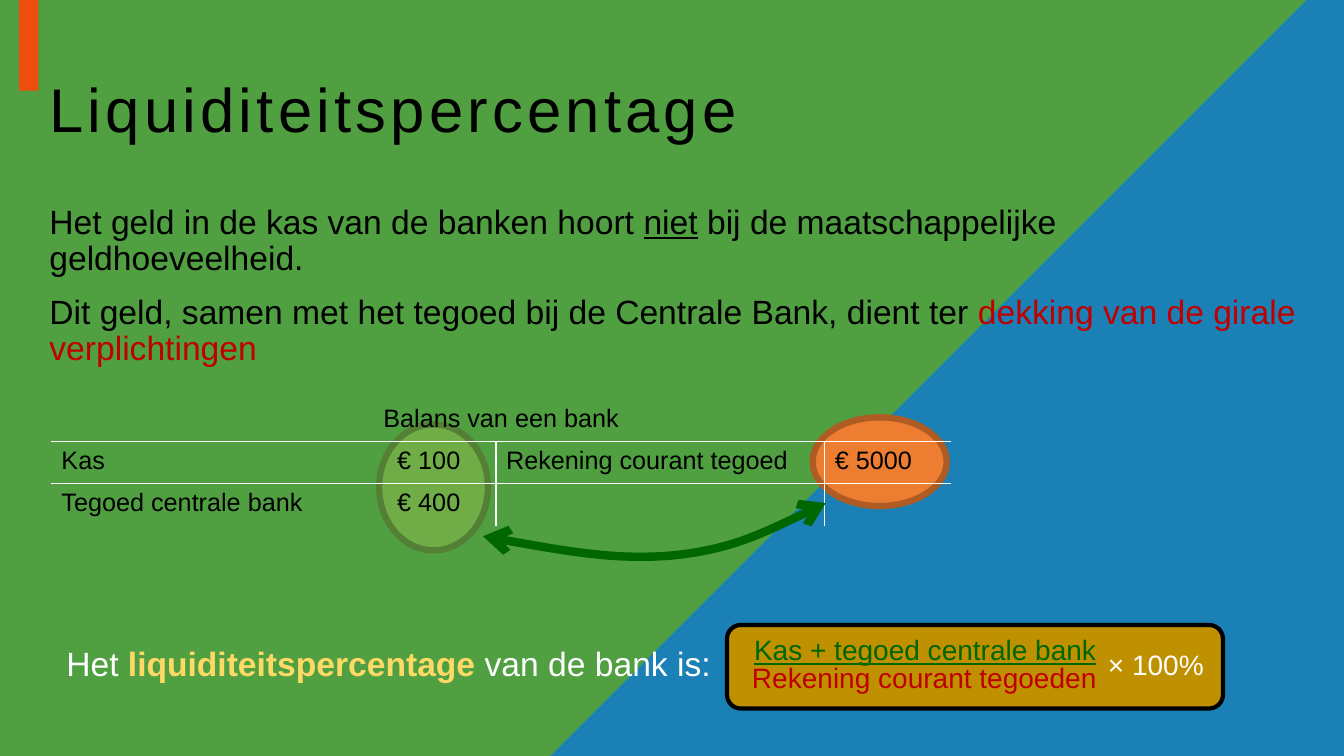
from lxml.etree import SubElement
from pptx import Presentation
from pptx.dml.color import RGBColor
from pptx.enum.shapes import MSO_SHAPE
from pptx.enum.text import MSO_ANCHOR, MSO_AUTO_SIZE, PP_ALIGN
from pptx.oxml.ns import qn
from pptx.util import Pt

PX = 9144
FONT = "Arial"
COLORS = {
    "field": "258812", "wedge": "1A80B6", "tab": "ED4D0F",
    "black": "000000", "white": "FFFFFF", "red": "C00000", "green": "006600",
    "yellow": "FFD966", "gold": "BF9000",
    "orange": "ED7D31", "orange_edge": "AF5C24",
    "lime": "70AD47", "lime_edge": "538035",
}


def px(*lengths):
    return [length * PX for length in lengths]


def color(name):
    return RGBColor.from_string(COLORS[name])


def add_block(slide, preset, box, fill, edge=None, edge_width=0):
    block = slide.shapes.add_shape(preset, *px(*box))
    style_block(block, fill, edge, edge_width)
    return block


def style_block(block, fill, edge=None, edge_width=0):
    block.shadow.inherit = False
    block.fill.solid()
    block.fill.fore_color.rgb = color(fill)
    if edge:
        block.line.color.rgb = color(edge)
        block.line.width = Pt(edge_width)
    else:
        block.line.fill.background()


def write(paragraph, runs, size, ink):
    paragraph.font.name = FONT
    paragraph.font.size = Pt(size)
    shared_ink = all(not changes.get("ink") for _, changes in runs)
    if shared_ink:
        paragraph.font.color.rgb = color(ink)
    for wording, changes in runs:
        run = paragraph.add_run()
        run.text = wording
        if not shared_ink:
            run.font.color.rgb = color(changes.get("ink", ink))
        if changes.get("bold"):
            run.font.bold = True
        if changes.get("underline"):
            run.font.underline = True


def add_text(slide, box, runs, size, ink, wrap=True):
    label = slide.shapes.add_textbox(*px(*box))
    label.text_frame.word_wrap = wrap
    write(label.text_frame.paragraphs[0], runs, size, ink)


def place(slide, placeholder, box):
    slide.shapes._spTree.append(placeholder._element)
    placeholder.left, placeholder.top, placeholder.width, placeholder.height = px(*box)
    placeholder.text_frame.auto_size = MSO_AUTO_SIZE.NONE
    return placeholder.text_frame


def draw_backdrop(slide, box):
    left, top, width, height = box
    field = add_block(slide, MSO_SHAPE.RECTANGLE, box, "field")
    shade = next(field._element.spPr.iter(qn("a:srgbClr")))
    SubElement(shade, qn("a:alpha"), val="80000")
    right, bottom = left + width, top + height
    outline = slide.shapes.build_freeform(*px(left + 1296, top))
    corners = [(right, top), (right, bottom), (left + 1296 - height, bottom)]
    outline.add_line_segments([px(*corner) for corner in corners], close=True)
    style_block(outline.convert_to_shape(), "wedge")
    add_block(slide, MSO_SHAPE.RECTANGLE, (left + 19, top, 19, 90), "tab")


def draw_title(slide, box):
    frame = place(slide, slide.shapes.title, box)
    frame.vertical_anchor = MSO_ANCHOR.MIDDLE
    heading = frame.paragraphs[0]
    heading.alignment = PP_ALIGN.LEFT
    heading.line_spacing = 0.9
    write(heading, [("Liquiditeitspercentage", {})], 44, "black")
    heading.font._element.set("spc", "300")


def draw_statements(slide, box):
    frame = place(slide, slide.placeholders[1], box)
    statements = [
        [("Het geld in de kas van de banken hoort ", {}),
         ("niet", {"underline": True}),
         (" bij de maatschappelijke geldhoeveelheid.", {})],
        [("Dit geld, samen met het tegoed bij de Centrale Bank, dient ter ", {}),
         ("dekking van de girale verplichtingen", {"ink": "red"})],
    ]
    for index, runs in enumerate(statements):
        statement = frame.add_paragraph() if index else frame.paragraphs[0]
        properties = statement._p.get_or_add_pPr()
        properties.set("marL", "0")
        properties.set("indent", "0")
        SubElement(properties, qn("a:buNone"))
        statement.line_spacing = 0.9
        statement.space_before = Pt(12)
        write(statement, runs, 24, "black")


def set_borders(cell, shown):
    properties = cell._tc.get_or_add_tcPr()
    for position, side in enumerate(("lnL", "lnR", "lnT", "lnB")):
        border = SubElement(properties, qn("a:" + side), w=str(Pt(1)))
        properties.insert(position, border)
        if side in shown:
            paint = SubElement(border, qn("a:solidFill"))
            SubElement(paint, qn("a:srgbClr"), val=COLORS["white"])
        else:
            SubElement(border, qn("a:noFill"))


def draw_balance_table(slide, box):
    entries = [
        ["Balans van een bank", "", "", ""],
        ["Kas", "€ 100", "Rekening courant tegoed", "€ 5000"],
        ["Tegoed centrale bank", "€ 400", "", ""],
    ]
    balance = slide.shapes.add_table(3, 4, *px(*box)).table
    balance.first_row = balance.horz_banding = False
    for column, width in zip(balance.columns, px(333, 108, 326, 125)):
        column.width = width
    balance.cell(0, 0).merge(balance.cell(0, 3))
    for r, entry_row in enumerate(entries):
        balance.rows[r].height = box[3] // 3 * PX
        for c, entry in enumerate(entry_row):
            cell = balance.cell(r, c)
            cell.fill.background()
            shown = {"lnT"} if r else set()
            if r < 2:
                shown.add("lnB")
            if r and c in (1, 2):
                shown.add("lnR")
            if r and c in (2, 3):
                shown.add("lnL")
            set_borders(cell, shown)
            if entry:
                write(cell.text_frame.paragraphs[0], [(entry, {})], 18, "black")
    balance.cell(0, 0).text_frame.paragraphs[0].alignment = PP_ALIGN.CENTER


def draw_coverage_arrow(slide, left, top):
    points = [px(left + x, top + y) for x, y in
              [(0, 33), (66, 45), (133, 57), (189, 52), (246, 46), (293, 23), (340, 0)]]
    outline = slide.shapes.build_freeform(*points[0])
    outline.add_line_segments(points[1:], close=False)
    arrow = outline.convert_to_shape()
    arrow.shadow.inherit = False
    arrow.fill.background()
    arrow.line.color.rgb = color("green")
    arrow.line.width = Pt(6)
    segments = list(arrow._element.iter(qn("a:lnTo")))
    for first in range(0, len(segments), 3):
        curve = SubElement(segments[first].getparent(), qn("a:cubicBezTo"))
        for segment in segments[first:first + 3]:
            curve.append(segment[0])
            segment.getparent().remove(segment)
    for end in ("a:headEnd", "a:tailEnd"):
        SubElement(arrow.line._get_or_add_ln(), qn(end), type="arrow")


def draw_balance(slide, box):
    left, top, width, height = box
    add_block(slide, MSO_SHAPE.OVAL, (left + 755, top + 18, 133, 88),
              "orange", "orange_edge", 4.5)
    add_block(slide, MSO_SHAPE.OVAL, (left + 325, top + 25, 108, 125),
              "lime", "lime_edge", 4.5)
    draw_balance_table(slide, box)
    draw_coverage_arrow(slide, left + 428, top + 103)


def draw_formula(slide, box):
    left, top, width, height = box
    add_block(slide, MSO_SHAPE.ROUNDED_RECTANGLE, (left + 665, top, 492, height),
              "gold", "black", 3)
    add_text(slide, (left, top + 13, 750, 50),
             [("Het ", {}), ("liquiditeitspercentage", {"ink": "yellow", "bold": True}),
              (" van de bank is:", {})], 24, "white")
    add_text(slide, (left + 680, top + 30, 371, 44),
             [("Rekening courant tegoeden", {})], 20, "red")
    add_text(slide, (left + 682, top + 3, 362, 44),
             [("Kas + tegoed centrale bank", {"underline": True})], 20, "green", False)
    add_text(slide, (left + 1033, top + 17, 116, 44), [("× 100%", {})], 20, "white", False)


def main():
    deck = Presentation()
    deck.slide_width, deck.slide_height = px(1333, 750)
    slide = deck.slides.add_slide(deck.slide_layouts[1])
    draw_backdrop(slide, (0, 0, 1333, 750))
    draw_title(slide, (39, 39, 1261, 145))
    draw_statements(slide, (39, 199, 1261, 402))
    draw_balance(slide, (51, 396, 892, 126))
    draw_formula(slide, (56, 620, 1157, 83))
    deck.save("out.pptx")


if __name__ == "__main__":
    main()
